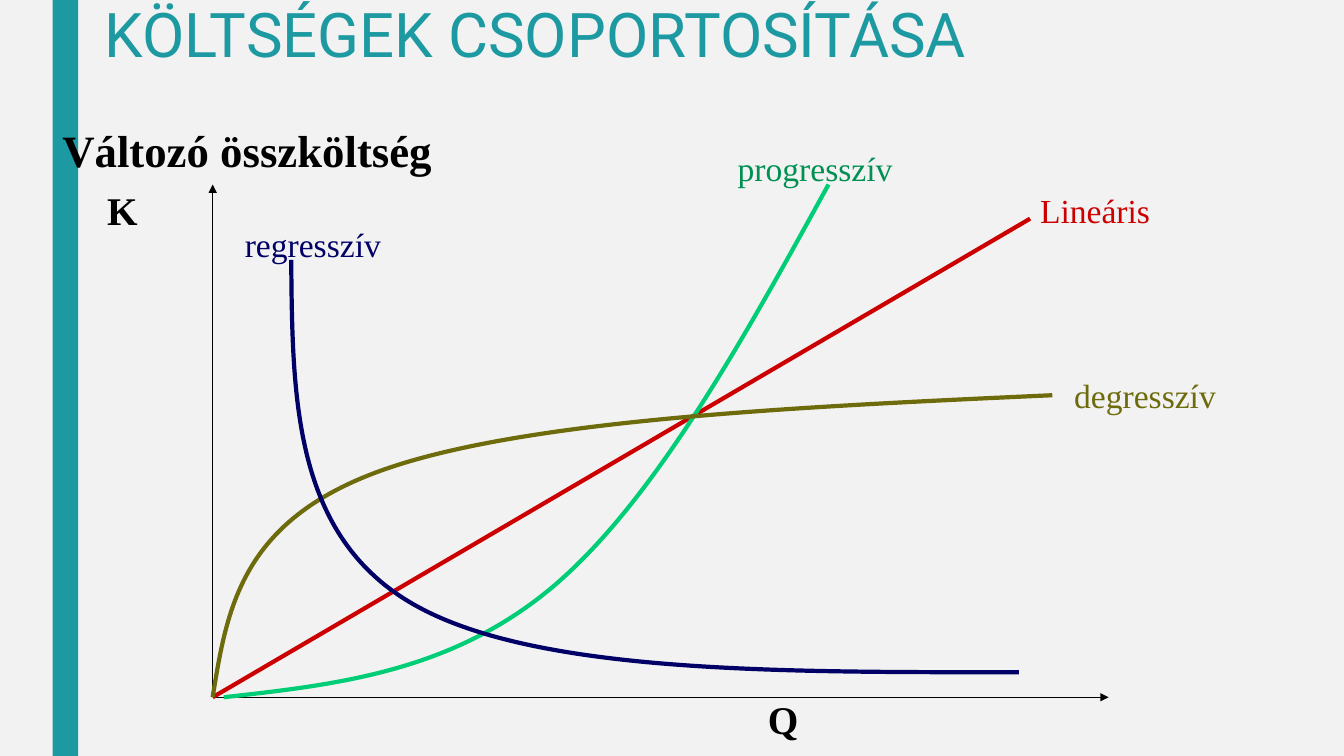
import dataclasses
import typing

import pptx
import pptx.dml.color
import pptx.enum.shapes
import pptx.enum.text
import pptx.oxml
import pptx.oxml.ns
import pptx.slide
import pptx.util

Cm = pptx.util.Cm
Pt = pptx.util.Pt
Point = tuple[float, float]


@dataclasses.dataclass(frozen=True)
class Theme:
    background: str = "F2F2F2"
    accent: str = "1D9AA1"
    ink: str = "000000"
    linear: str = "CC0000"
    progressive: str = "00CE76"
    progressive_label: str = "009052"
    degressive: str = "6D6B0B"
    regressive: str = "000066"
    title_font: str = "Roboto"
    body_font: str = "Times New Roman"
    title_size: float = 44
    heading_size: float = 32
    axis_size: float = 28
    label_size: float = 24
    axis_width: float = 0.75
    curve_width: float = 3


THEME = Theme()


class Line(typing.NamedTuple):
    """One paragraph; indent in centimetres, space_before in points."""
    text: str
    size: float
    color: str
    bold: bool = False
    font: str = THEME.body_font
    indent: float = 0
    space_before: float = 0
    line_spacing: float = 1.0


class Caption(typing.NamedTuple):
    left: float
    top: float
    width: float
    height: float
    lines: tuple[Line, ...]


class Straight(typing.NamedTuple):
    start: Point
    end: Point
    color: str
    width: float
    arrow: bool = False


class Curve(typing.NamedTuple):
    """Two cubic Bézier pieces sharing their middle point: seven points."""
    points: tuple[Point, ...]
    color: str


ORIGIN = (5.36, 17.57)

STRAIGHTS = (
    Straight(ORIGIN, (5.36, 4.65), THEME.ink, THEME.axis_width, arrow=True),
    Straight(ORIGIN, (27.94, 17.57), THEME.ink, THEME.axis_width, arrow=True),
    Straight(ORIGIN, (25.96, 5.51), THEME.linear, THEME.curve_width),
)

CURVES = (
    Curve(((5.64, 17.57), (8.53, 17.25), (11.4, 16.92), (13.94, 14.78),
           (16.48, 12.62), (18.69, 8.64), (20.88, 4.65)), THEME.progressive),
    Curve((ORIGIN, (5.72, 15.34), (6.07, 13.13), (9.6, 11.86),
           (13.13, 10.59), (19.84, 10.26), (26.52, 9.96)), THEME.degressive),
    Curve(((7.34, 6.55), (7.37, 10.03), (7.39, 13.51), (10.44, 15.24),
           (13.49, 16.97), (19.58, 16.94), (25.68, 16.94)), THEME.regressive),
)

HEADINGS = (
    Caption(0, 2.97, 33.02, 15.82, (
        Line("Változó összköltség", THEME.heading_size, THEME.ink, bold=True,
             indent=1.32),
        Line("K", THEME.axis_size, THEME.ink, bold=True, indent=2.45,
             space_before=6.6),
        Line("Q", THEME.axis_size, THEME.ink, bold=True, indent=19.1,
             space_before=330.4),
    )),
    Caption(2.39, 0, 30.35, 2.74, (
        Line("KÖLTSÉGEK CSOPORTOSÍTÁSA", THEME.title_size, THEME.accent,
             font=THEME.title_font, line_spacing=0.89),
    )),
)


def curve_label(text: str, left: float, top: float, color: str,
                width: float = 6.5) -> Caption:
    return Caption(left, top, width, 1.27,
                   (Line(text, THEME.label_size, color),))


CURVE_LABELS = (
    curve_label("Lineáris", 25.96, 4.65, THEME.linear),
    curve_label("progresszív", 18.34, 3.61, THEME.progressive_label),
    curve_label("degresszív", 26.82, 9.32, THEME.degressive),
    curve_label("regresszív", 5.92, 5.51, THEME.regressive, width=7.9),
)


def rgb(color: str) -> pptx.dml.color.RGBColor:
    return pptx.dml.color.RGBColor.from_string(color)


def apply_format(target: typing.Any, values: dict[str, typing.Any]) -> None:
    for attribute, value in values.items():
        setattr(target, attribute, value)


def make_drawing_element(tag: str, attributes: str = "") -> typing.Any:
    return pptx.oxml.parse_xml(
        f'<a:{tag} {pptx.oxml.ns.nsdecls("a")} {attributes}/>')


def add_side_band(slide: pptx.slide.Slide, height: int) -> None:
    band = slide.shapes.add_shape(
        pptx.enum.shapes.MSO_SHAPE.RECTANGLE, Cm(1.33), 0, Cm(0.64), height)
    band.shadow.inherit = False
    band.fill.solid()
    band.fill.fore_color.rgb = rgb(THEME.accent)
    band.line.fill.background()


def add_straight(slide: pptx.slide.Slide, straight: Straight) -> None:
    connector = slide.shapes.add_connector(
        pptx.enum.shapes.MSO_CONNECTOR.STRAIGHT,
        *map(Cm, straight.start + straight.end))
    connector.line.width = Pt(straight.width)
    connector.line.color.rgb = rgb(straight.color)
    properties = connector.element.spPr
    if straight.arrow:
        outline = properties.find(pptx.oxml.ns.qn("a:ln"))
        outline.append(make_drawing_element("tailEnd", 'type="triangle"'))
    properties.append(make_drawing_element("effectLst"))


def add_curve(slide: pptx.slide.Slide, curve: Curve) -> None:
    """Draw the control polygon, then turn each three segments into a Bézier."""
    builder = slide.shapes.build_freeform(*map(Cm, curve.points[0]))
    builder.add_line_segments(
        [tuple(map(Cm, point)) for point in curve.points[1:]], close=False)
    outline = builder.convert_to_shape()
    segments = list(outline.element.iter(pptx.oxml.ns.qn("a:lnTo")))
    for first in range(0, len(segments), 3):
        bezier = make_drawing_element("cubicBezTo")
        segments[first].addprevious(bezier)
        for segment in segments[first:first + 3]:
            bezier.append(segment[0])
            segment.getparent().remove(segment)
    outline.shadow.inherit = False
    outline.fill.background()
    outline.line.width = Pt(THEME.curve_width)
    outline.line.color.rgb = rgb(curve.color)


def add_caption(slide: pptx.slide.Slide, caption: Caption) -> None:
    box = slide.shapes.add_textbox(
        *map(Cm, (caption.left, caption.top, caption.width, caption.height)))
    frame = box.text_frame
    apply_format(frame, {
        "word_wrap": True,
        "vertical_anchor": pptx.enum.text.MSO_ANCHOR.TOP,
    })
    for index, line in enumerate(caption.lines):
        paragraph = frame.add_paragraph() if index else frame.paragraphs[0]
        apply_format(paragraph, {
            "line_spacing": line.line_spacing,
            "space_before": Pt(line.space_before),
        })
        paragraph._p.get_or_add_pPr().set("marL", str(int(Cm(line.indent))))
        run = paragraph.add_run()
        run.text = line.text
        apply_format(run.font, {
            "name": line.font, "size": Pt(line.size), "bold": line.bold})
        run.font.color.rgb = rgb(line.color)


def main() -> None:
    presentation = pptx.Presentation()
    apply_format(presentation, {
        "slide_width": Cm(33.87), "slide_height": Cm(19.05)})
    slide = presentation.slides.add_slide(presentation.slide_layouts[6])
    slide.background.fill.solid()
    slide.background.fill.fore_color.rgb = rgb(THEME.background)

    add_side_band(slide, presentation.slide_height)
    for heading in HEADINGS:
        add_caption(slide, heading)
    for straight in STRAIGHTS:
        add_straight(slide, straight)
    for curve in CURVES:
        add_curve(slide, curve)
    for label in CURVE_LABELS:
        add_caption(slide, label)
    presentation.save("out.pptx")


if __name__ == "__main__":
    main()
